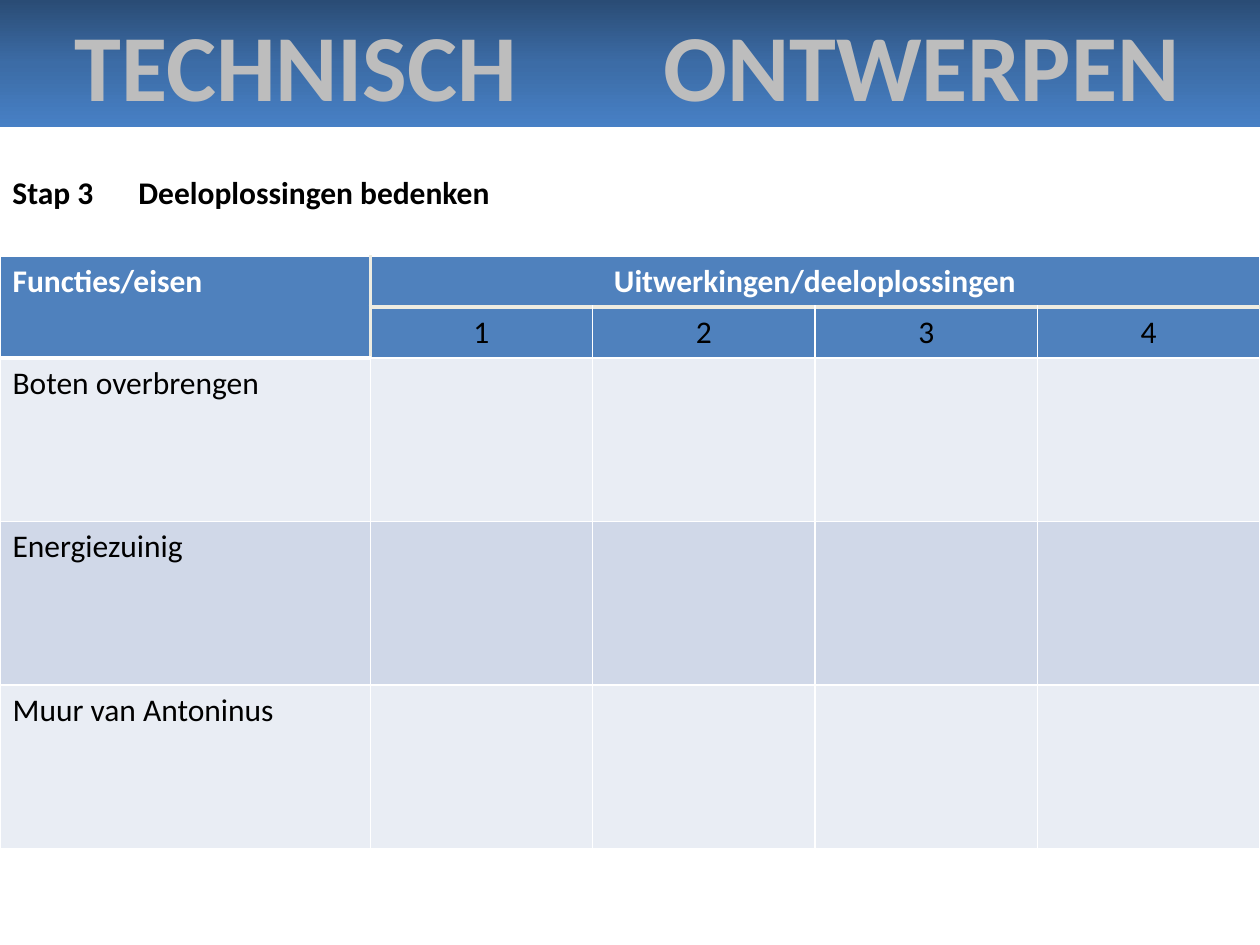
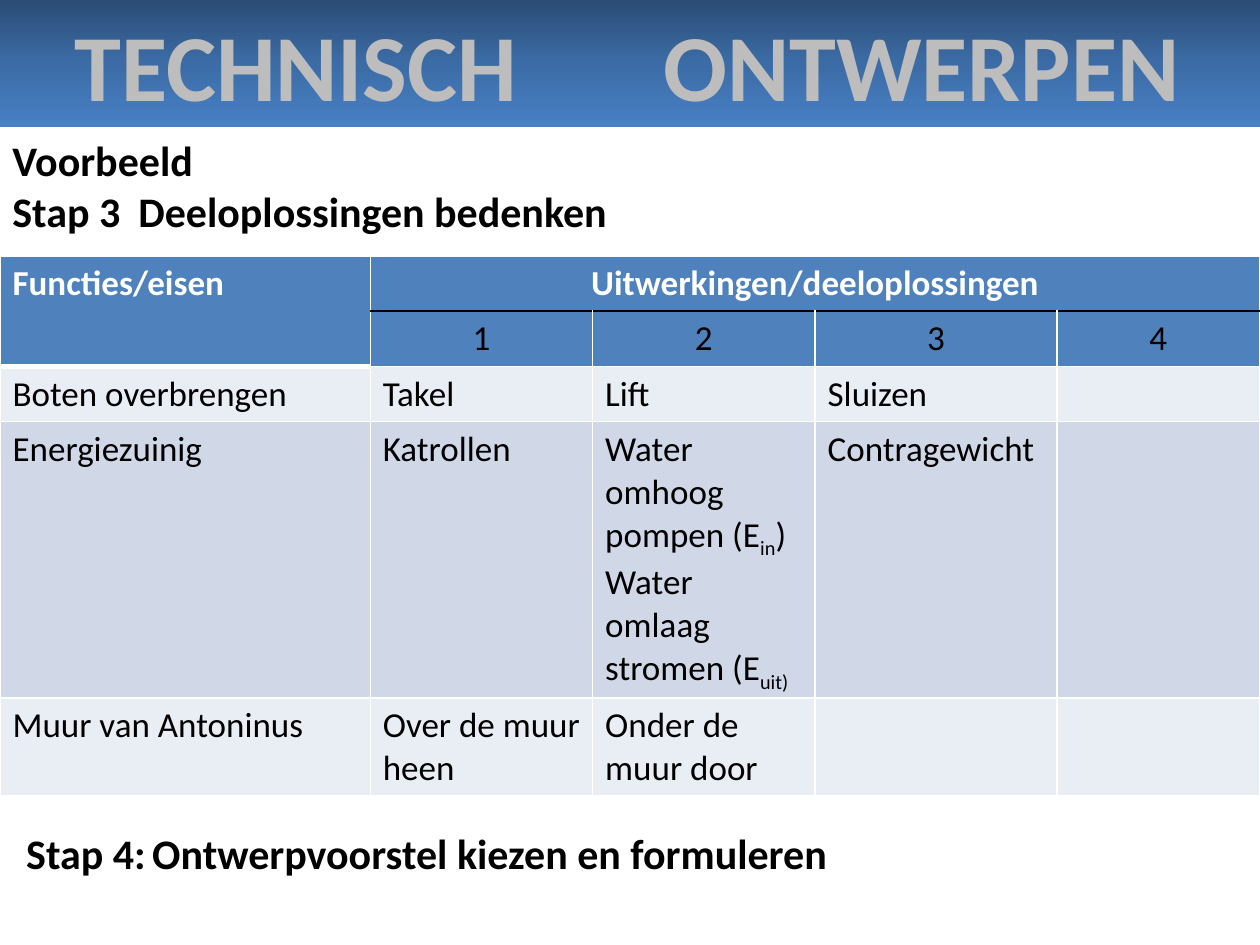
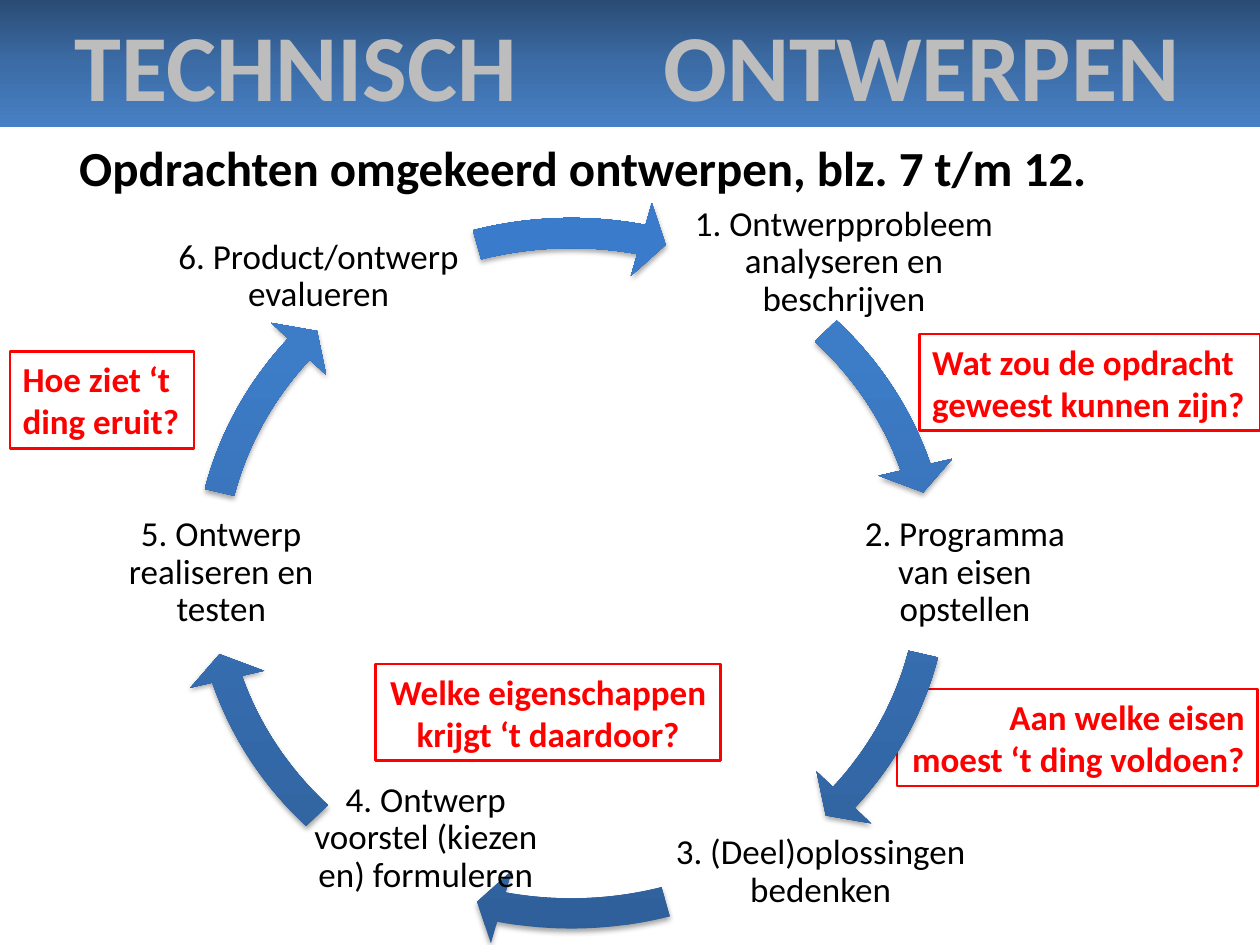
from lxml.etree import SubElement
from pptx import Presentation
from pptx.dml.color import RGBColor
from pptx.enum.shapes import MSO_SHAPE
from pptx.enum.text import MSO_ANCHOR, MSO_AUTO_SIZE, PP_ALIGN
from pptx.oxml.ns import qn
from pptx.util import Pt

FONT = "Calibri"
BLACK, WHITE, RED, GREY = "000000", "FFFFFF", "FF0000", "BDBDBD"
HEADER, LIGHT, DARK, CREAM = "4F81BD", "E9EDF4", "D0D8E8", "EEECE1"
BAND_STOPS = [(0, "2A4C75"), (50, "3C6CA6"), (100, "4780C5")]
ARROW_STOPS = [(0, "2F5F99"), (80, "3D7CC7"), (100, "3A7CCB")]
THIN_WHITE = (WHITE, 1)
PAGE_WIDTH, PAGE_HEIGHT = 720, 540
BAND_HEIGHT = 72.8
TABLE_TOP = 146.2


def rgb(color):
    return RGBColor.from_string(color)


def points(*lengths):
    return [Pt(length) for length in lengths]


def style(para, size, color, bold=False, align=PP_ALIGN.LEFT):
    para.alignment = align
    para.font.name = FONT
    para.font.size = Pt(size)
    para.font.bold = bold
    para.font.color.rgb = rgb(color)


def write_lines(frame, lines, size, color=BLACK, bold=False, align=PP_ALIGN.LEFT):
    """Write one paragraph per line; a tuple alternates normal and subscript runs."""
    for index, line in enumerate(lines):
        para = frame.add_paragraph() if index else frame.paragraphs[0]
        if isinstance(line, tuple):
            for position, text in enumerate(line):
                span = para.add_run()
                span.text = text
                if position % 2:
                    span._r.get_or_add_rPr().set("baseline", "-25000")
        else:
            para.text = line
        style(para, size, color, bold, align)


def fill_gradient(shape, stops, angle):
    shape.fill.gradient()
    shape.fill.gradient_angle = angle
    stop_list = shape._element.spPr.find(".//" + qn("a:gsLst"))
    stop_list.clear()
    for position, color in stops:
        stop = SubElement(stop_list, qn("a:gs"), pos=str(position * 1000))
        SubElement(stop, qn("a:srgbClr"), val=color)


def add_shadow(shape):
    shape.shadow.inherit = False
    effects = shape._element.spPr.find(qn("a:effectLst"))
    shadow = SubElement(effects, qn("a:outerShdw"), blurRad=str(Pt(3.1)),
                        dist=str(Pt(1.8)), dir="5400000", rotWithShape="0")
    color = SubElement(shadow, qn("a:srgbClr"), val=BLACK)
    SubElement(color, qn("a:alpha"), val="35000")


def add_page(deck):
    """Add a page with the gradient title band."""
    page = deck.slides.add_slide(deck.slide_layouts[5])
    title = page.shapes.title
    title.left, title.top, title.width, title.height = points(0, 0, PAGE_WIDTH, BAND_HEIGHT)
    fill_gradient(title, BAND_STOPS, 270)
    frame = title.text_frame
    frame.auto_size = MSO_AUTO_SIZE.NONE
    frame.vertical_anchor = MSO_ANCHOR.MIDDLE
    frame.margin_left, frame.margin_right = points(42.6, 0)
    para = frame.paragraphs[0]
    para.text = "TECHNISCH\tONTWERPEN"
    tabs = SubElement(para._p.get_or_add_pPr(), qn("a:tabLst"))
    SubElement(tabs, qn("a:tab"), pos=str(Pt(336.4)), algn="l")
    style(para, 54, GREY, bold=True)
    return page


def add_heading(page, box, lines, size, margin_top=3.6):
    frame = page.shapes.add_textbox(*points(*box)).text_frame
    frame.word_wrap = True
    frame.margin_top = Pt(margin_top)
    write_lines(frame, lines, size, bold=True)


def format_cell(cell, fill, borders):
    properties = cell._tc.get_or_add_tcPr()
    for side in "LRTB":
        color, width = borders.get(side, THIN_WHITE)
        line = SubElement(properties, qn("a:ln" + side), w=str(Pt(width)))
        solid = SubElement(line, qn("a:solidFill"))
        SubElement(solid, qn("a:srgbClr"), val=color)
    cell.fill.solid()
    cell.fill.fore_color.rgb = rgb(fill)


def header_borders(row, column, rule, divider):
    if column == 0:
        return {"R": divider, "B": (WHITE, 3)}
    borders = {"T" if row else "B": rule}
    if column == 1:
        borders["L"] = divider
    return borders


def add_solutions(page, widths, heights, solutions, size, rule, divider):
    """Add the table of requirements against their numbered partial solutions."""
    rows = [["Functies/eisen", "Uitwerkingen/deeloplossingen"], ["", "1", "2", "3", "4"]]
    rows += solutions
    table = page.shapes.add_table(len(rows), len(widths), *points(
        0, TABLE_TOP, sum(widths), sum(heights))).table
    table.first_row = table.horz_banding = False
    for column, width in zip(table.columns, widths):
        column.width = Pt(width)
    for row, height in zip(table.rows, heights):
        row.height = Pt(height)
    table.cell(0, 0).merge(table.cell(1, 0))
    table.cell(0, 1).merge(table.cell(0, len(widths) - 1))

    for row, contents in enumerate(rows):
        is_header = row < 2
        fill = HEADER if is_header else (DARK if row % 2 else LIGHT)
        for column in range(len(widths)):
            cell = table.cell(row, column)
            borders = header_borders(row, column, rule, divider) if is_header else {}
            format_cell(cell, fill, borders)
            content = contents[column] if column < len(contents) else ""
            lines = content if isinstance(content, list) else [content]
            write_lines(cell.text_frame, lines, size,
                        color=BLACK if row else WHITE, bold=row == 0,
                        align=PP_ALIGN.CENTER if is_header and column else PP_ALIGN.LEFT)


def add_question(page, box, lines, align):
    shape = page.shapes.add_shape(MSO_SHAPE.RECTANGLE, *points(*box))
    shape.shadow.inherit = False
    shape.fill.background()
    shape.line.color.rgb = rgb(RED)
    shape.line.width = Pt(1.5)
    shape.text_frame.word_wrap = True
    write_lines(shape.text_frame, lines, 20, RED, bold=True, align=align)


def add_step(page, box, text):
    frame = page.shapes.add_textbox(*points(*box)).text_frame
    frame.word_wrap = True
    frame.vertical_anchor = MSO_ANCHOR.MIDDLE
    frame.margin_left = frame.margin_right = Pt(1.5)
    frame.margin_top = frame.margin_bottom = Pt(1.5)
    write_lines(frame, [text], 20, align=PP_ALIGN.CENTER)
    frame.paragraphs[0].line_spacing = 0.9


def add_cycle_arrow(page, box, start, end):
    """Add an arrow along the cycle, with its angles in degrees clockwise from the right."""
    arrow = page.shapes.add_shape(MSO_SHAPE.CIRCULAR_ARROW, *points(*box))
    for index, value in enumerate([0.04, 2.5, end * 0.6, start * 0.6, 0.05]):
        arrow.adjustments[index] = value
    fill_gradient(arrow, ARROW_STOPS, 90)
    arrow.line.fill.background()
    add_shadow(arrow)


def add_cycle(page, box):
    left, top, width, height = box
    step_height = 88.6
    steps = [
        (285.8, -5.8, 197.3, "1. Ontwerpprobleem analyseren en beschrijven"),
        (390.2, 171.4, 126.7, "2. Programma van eisen opstellen"),
        (285.8, 342.7, 170.6, "3. (Deel)oplossingen bedenken"),
        (78.5, 323.3, 133.9, "4. Ontwerp\nvoorstel (kiezen en) formuleren"),
        (-27.3, 171.4, 111.6, "5. Ontwerp realiseren en testen"),
        (1.4, 2.2, 165.6, "6. Product/ontwerp evalueren"),
    ]
    half_turn = [(316.39, 342.88), (12.94, 39.44), (73.98, 101.85)]
    arcs = half_turn + [((start + 180) % 360, (end + 180) % 360) for start, end in half_turn]
    for (x, y, step_width, text), (start, end) in zip(steps, arcs):
        add_step(page, (left + x, top + y, step_width, step_height), text)
        add_cycle_arrow(page, box, start, end)


def build_blank_table_page(deck):
    page = add_page(deck)
    add_heading(page, (0, 73.4, 289.4, 422), ["Stap 3\tDeeloplossingen bedenken"], 18,
                margin_top=25.6)
    solutions = [["Boten overbrengen"], ["Energiezuinig"], ["Muur van Antoninus"]]
    accent = (CREAM, 2.25)
    add_solutions(page, [211.6] + [127.1] * 4, [29.2] * 2 + [93.4] * 3, solutions, 18,
                  rule=accent, divider=accent)


def build_example_page(deck):
    page = add_page(deck)
    add_heading(page, (0, 73.4, 357.8, 65.5),
                ["Voorbeeld", "Stap 3\tDeeloplossingen bedenken"], 24)
    pumping = [("Water omhoog pompen (E", "in", ")"), ("Water omlaag stromen (E", "uit)")]
    solutions = [
        ["Boten overbrengen", "Takel", "Lift", "Sluizen"],
        ["Energiezuinig", "Katrollen", pumping, "Contragewicht"],
        ["Muur van Antoninus", "Over de muur heen", "Onder de muur door"],
    ]
    add_solutions(page, [211.6, 127.1, 127.1, 138.2, 116], [31.6] * 3 + [149.4, 56],
                  solutions, 20, rule=(BLACK, 1), divider=THIN_WHITE)
    add_heading(page, (7.9, 469.4, 476.6, 36),
                ["Stap 4:\tOntwerpvoorstel kiezen en formuleren"], 24)


def build_cycle_page(deck):
    page = add_page(deck)
    questions = [
        (5.8, 200.9, 105.1, ["Hoe ziet ‘t", "ding eruit?"], PP_ALIGN.LEFT),
        (214.6, 379.4, 197.3, ["Welke eigenschappen", "krijgt ‘t daardoor?"], PP_ALIGN.CENTER),
        (512.6, 393.8, 205.9, ["Aan welke eisen", "moest ‘t ding voldoen?"], PP_ALIGN.RIGHT),
        (525.6, 190.8, 194.4, ["Wat zou de opdracht", "geweest kunnen zijn?"], PP_ALIGN.LEFT),
    ]
    for left, top, width, lines, align in questions:
        add_question(page, (left, top, width, 55.4), lines, align)
    add_cycle(page, (97.9, 111.6, 457.2, 432))
    add_heading(page, (38.2, 74.9, 681.8, 41),
                ["Opdrachten omgekeerd ontwerpen, blz. 7 t/m 12."], 28)


def main():
    deck = Presentation()
    deck.slide_width, deck.slide_height = points(PAGE_WIDTH, PAGE_HEIGHT)
    build_blank_table_page(deck)
    build_example_page(deck)
    build_cycle_page(deck)
    deck.save("out.pptx")


if __name__ == "__main__":
    main()
